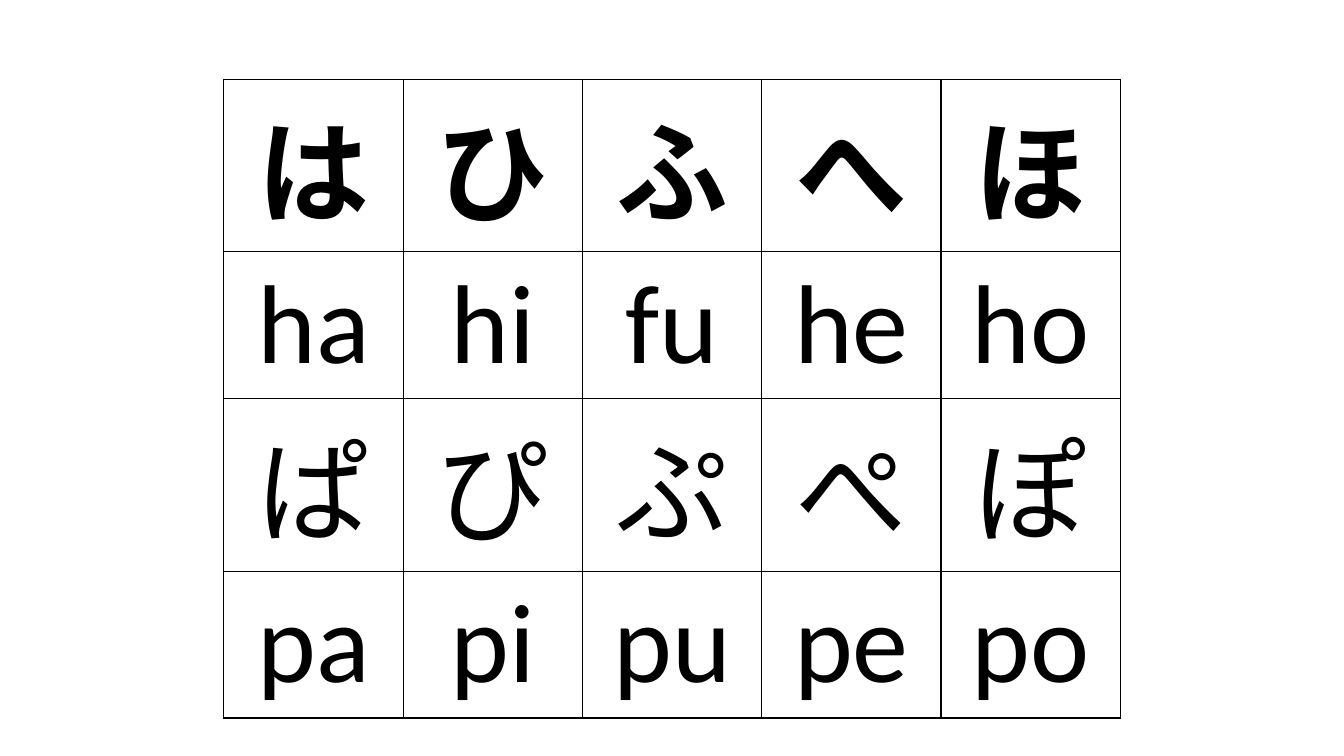
"""Build a slide with a table of the Japanese ha and pa kana rows and their readings."""
from dataclasses import dataclass

from lxml.etree import SubElement
from pptx import Presentation
from pptx.dml.color import RGBColor
from pptx.enum.text import PP_ALIGN
from pptx.oxml.ns import qn
from pptx.util import Cm, Pt


@dataclass(frozen=True)
class Theme:
    font: str = "Calibri"
    size: int = 80
    ink: str = "000000"
    paper: str = "FFFFFF"
    border: int = 1


def add_borders(cell, theme):
    properties = cell._tc.get_or_add_tcPr()
    for position, side in enumerate(("lnL", "lnR", "lnT", "lnB")):
        line = SubElement(properties, qn(f"a:{side}"), w=str(Pt(theme.border)))
        fill = SubElement(line, qn("a:solidFill"))
        SubElement(fill, qn("a:srgbClr"), val=theme.ink)
        properties.insert(position, line)


theme = Theme()
kana_rows = [
    ("は", "ひ", "ふ", "へ", "ほ"),
    ("ha", "hi", "fu", "he", "ho"),
    ("ぱ", "ぴ", "ぷ", "ぺ", "ぽ"),
    ("pa", "pi", "pu", "pe", "po"),
]
column_width = Cm(4.52)
row_heights = [Cm(4.33), Cm(3.7)] * 2

presentation = Presentation()
presentation.slide_width = Cm(33.87)
presentation.slide_height = Cm(19.05)
slide = presentation.slides.add_slide(presentation.slide_layouts[6])

table = slide.shapes.add_table(
    len(kana_rows), len(kana_rows[0]), Cm(5.64), Cm(2),
    column_width * len(kana_rows[0]), sum(row_heights),
).table
table.first_row = False
table.horz_banding = False
for column in table.columns:
    column.width = column_width

for row, height, syllables in zip(table.rows, row_heights, kana_rows):
    row.height = height
    for cell, syllable in zip(row.cells, syllables):
        cell.text = syllable
        cell.fill.solid()
        cell.fill.fore_color.rgb = RGBColor.from_string(theme.paper)
        add_borders(cell, theme)
        paragraph = cell.text_frame.paragraphs[0]
        paragraph.alignment = PP_ALIGN.CENTER
        paragraph.font.name = theme.font
        paragraph.font.size = Pt(theme.size)
        paragraph.font.bold = syllables is kana_rows[0]
        paragraph.font.color.rgb = RGBColor.from_string(theme.ink)

presentation.save("out.pptx")
